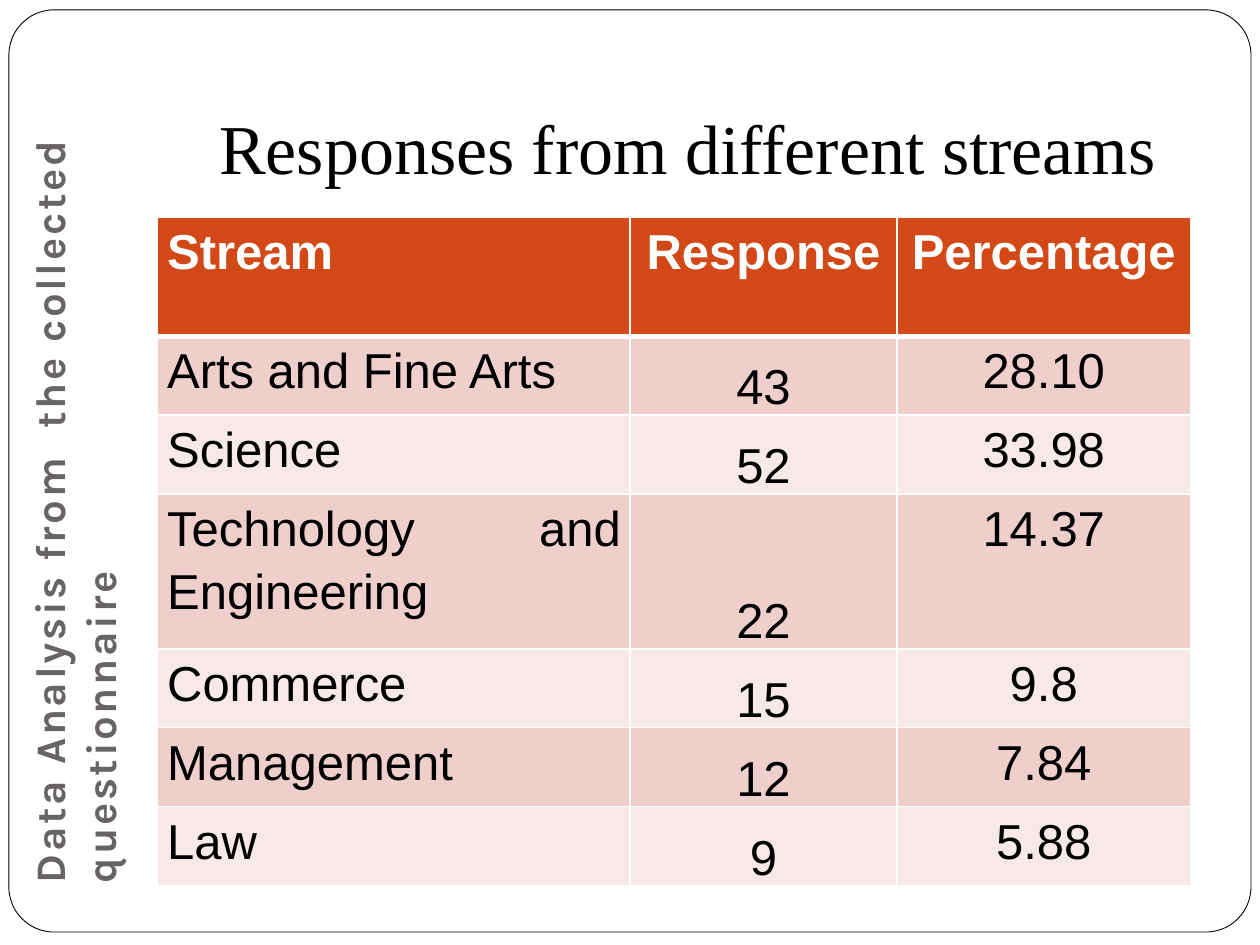
from dataclasses import dataclass
from typing import NamedTuple

from lxml import etree
from pptx import Presentation
from pptx.dml.color import RGBColor
from pptx.enum.shapes import MSO_SHAPE
from pptx.enum.text import MSO_ANCHOR, MSO_AUTO_SIZE, PP_ALIGN
from pptx.oxml.ns import qn
from pptx.util import Cm, Pt

LEFT, CENTER, JUSTIFY = PP_ALIGN.LEFT, PP_ALIGN.CENTER, PP_ALIGN.JUSTIFY
TOP, BOTTOM = MSO_ANCHOR.TOP, MSO_ANCHOR.BOTTOM
TITLE_ONLY = 5


@dataclass(frozen=True)
class Theme:
    white: str = "FFFFFF"
    black: str = "000000"
    side_text: str = "696464"
    header: str = "D34817"
    bands: tuple[str, str] = ("EFCFCC", "F7E9E8")
    side_size: float = 24
    heading_size: float = 40
    table_size: float = 28
    side_font: str = "Karla"
    heading_font: str = "Times New Roman"
    table_font: str = "Arial"


class Column(NamedTuple):
    heading: str
    width: float
    align: PP_ALIGN
    anchor: MSO_ANCHOR


class Stream(NamedTuple):
    name: str
    response: str
    percentage: str
    height: float = 1.59


THEME = Theme()
HEADER_HEIGHT = 2.41
COLUMNS = [
    Column("Stream", 9.52, JUSTIFY, TOP),
    Column("Response", 5.38, CENTER, BOTTOM),
    Column("Percentage", 5.92, CENTER, TOP),
]
STREAMS = [
    Stream("Arts and Fine Arts", "43", "28.10"),
    Stream("Science", "52", "33.98"),
    Stream("Technology and Engineering", "22", "14.37", 3.12),
    Stream("Commerce", "15", "9.8"),
    Stream("Management", "12", "7.84"),
    Stream("Law", "9", "5.88"),
]


def write_text(text_frame, text: str, *, font: str, size: float, color: str,
               bold: bool = False, align: PP_ALIGN = LEFT,
               line_spacing: float = 1.0, tracking: float = 0) -> None:
    """Fill the frame with one formatted paragraph; tracking is in points."""
    para = text_frame.paragraphs[0]
    para.alignment = align
    para.line_spacing = line_spacing
    span = para.add_run()
    span.text = text
    span.font.name = font
    span.font.size = Pt(size)
    span.font.bold = bold
    span.font.color.rgb = RGBColor.from_string(color)
    if tracking:
        span.font._element.set("spc", str(round(tracking * 100)))


def set_borders(cell, color: str, top: float = 1, bottom: float = 1) -> None:
    properties = cell._tc.get_or_add_tcPr()
    widths = {"a:lnL": 1, "a:lnR": 1, "a:lnT": top, "a:lnB": bottom}
    for position, (tag, width) in enumerate(widths.items()):
        line = etree.Element(qn(tag), w=str(Pt(width)))
        fill = etree.SubElement(line, qn("a:solidFill"))
        etree.SubElement(fill, qn("a:srgbClr"), val=color)
        properties.insert(position, line)


def add_frame(page) -> None:
    frame = page.shapes.add_shape(MSO_SHAPE.ROUNDED_RECTANGLE,
                                  Cm(0.18), Cm(0.2), Cm(25.04), Cm(18.59))
    frame.adjustments[0] = 0.049
    frame.shadow.inherit = False
    frame.fill.solid()
    frame.fill.fore_color.rgb = RGBColor.from_string(THEME.white)
    frame.line.color.rgb = RGBColor.from_string(THEME.black)
    frame.line.width = Pt(0.5)
    page.shapes._spTree.insert(2, frame._element)  # behind the title


def format_side_title(page) -> None:
    title = page.shapes.title
    title.left, title.top = Cm(-7.04), Cm(8.25)
    title.width, title.height = Cm(18.06), Cm(1.55)
    title.rotation = 270
    text_frame = title.text_frame
    text_frame.auto_size = MSO_AUTO_SIZE.NONE
    text_frame.word_wrap = True
    text_frame.vertical_anchor = BOTTOM
    text_frame.margin_bottom = Cm(0.25)
    write_text(text_frame, "Data Analysis from  the collected questionnaire",
               font=THEME.side_font, size=THEME.side_size,
               color=THEME.side_text, bold=True, tracking=1.5)


def add_heading(page) -> None:
    box = page.shapes.add_textbox(Cm(4.17), Cm(1.98), Cm(19.84), Cm(1.98))
    box.text_frame.word_wrap = True
    write_text(box.text_frame, "Responses from different streams",
               font=THEME.heading_font, size=THEME.heading_size, color=THEME.black)


def fill_cell(cell, text: str, column: Column, row: int) -> None:
    is_header = row == 0
    background = THEME.header if is_header else THEME.bands[(row - 1) % 2]
    cell.fill.solid()
    cell.fill.fore_color.rgb = RGBColor.from_string(background)
    cell.margin_left = cell.margin_right = Cm(0.19)
    cell.margin_top = cell.margin_bottom = 0
    cell.vertical_anchor = TOP if is_header else column.anchor
    write_text(cell.text_frame, text, font=THEME.table_font,
               size=THEME.table_size, bold=is_header, align=column.align,
               color=THEME.white if is_header else THEME.black, line_spacing=1.15)
    set_borders(cell, THEME.white, top=3 if row == 1 else 1,
                bottom=3 if is_header else 1)


def add_stream_table(page) -> None:
    header = [column.heading for column in COLUMNS]
    rows = [header] + [list(stream[:3]) for stream in STREAMS]
    heights = [HEADER_HEIGHT] + [stream.height for stream in STREAMS]
    total_width = sum(column.width for column in COLUMNS)
    table = page.shapes.add_table(len(rows), len(COLUMNS), Cm(3.18), Cm(4.37),
                                  Cm(total_width), Cm(sum(heights))).table
    for index, column in enumerate(COLUMNS):
        table.columns[index].width = Cm(column.width)
    for row, (texts, height) in enumerate(zip(rows, heights)):
        table.rows[row].height = Cm(height)
        for index, (text, column) in enumerate(zip(texts, COLUMNS)):
            fill_cell(table.cell(row, index), text, column, row)


def main() -> None:
    deck = Presentation()
    deck.slide_width, deck.slide_height = Cm(25.4), Cm(19.05)
    page = deck.slides.add_slide(deck.slide_layouts[TITLE_ONLY])
    add_frame(page)
    format_side_title(page)
    add_stream_table(page)
    add_heading(page)
    deck.save("out.pptx")


if __name__ == "__main__":
    main()
